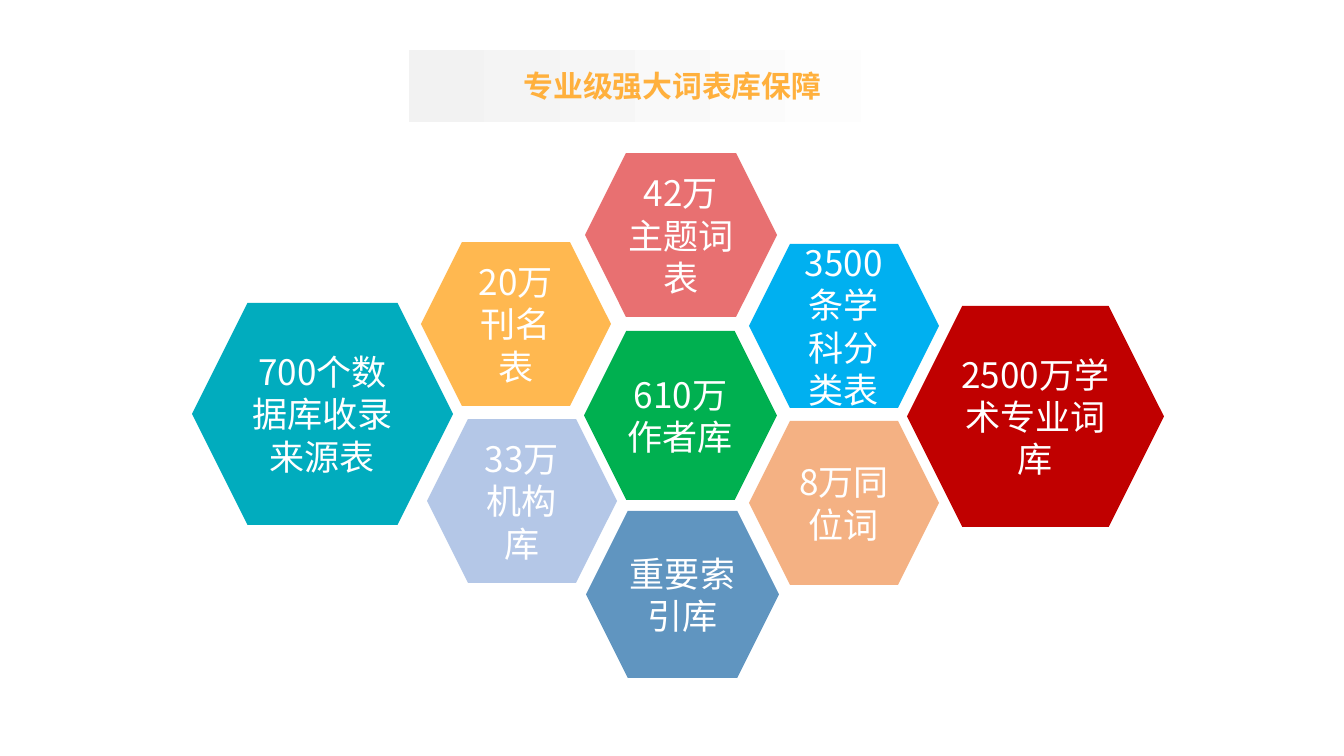
from dataclasses import dataclass

from lxml.etree import SubElement
from pptx import Presentation
from pptx.dml.color import RGBColor
from pptx.enum.shapes import MSO_SHAPE
from pptx.enum.text import MSO_ANCHOR, MSO_AUTO_SIZE, PP_ALIGN
from pptx.oxml.ns import qn
from pptx.shapes.base import BaseShape
from pptx.slide import Slide
from pptx.util import Pt

SCALE = 914400 / 134.4
FACE = "Noto Sans CJK SC"
WHITE = RGBColor(0xFF, 0xFF, 0xFF)
GREY = RGBColor(0xF2, 0xF2, 0xF2)
AMBER = RGBColor(0xFF, 0xB0, 0x3D)
SKY = RGBColor(0x00, 0xB0, 0xF0)
PEACH = RGBColor(0xF4, 0xB1, 0x83)
LILAC = RGBColor(0xB4, 0xC7, 0xE7)
GOLD = RGBColor(0xFF, 0xB8, 0x50)
TEAL = RGBColor(0x01, 0xAC, 0xBE)
ROSE = RGBColor(0xE8, 0x70, 0x71)
STEEL = RGBColor(0x60, 0x95, 0xC0)
RED = RGBColor(0xC0, 0x00, 0x00)
GREEN = RGBColor(0x00, 0xB0, 0x50)


@dataclass
class Cell:
    text: str
    fill: RGBColor
    left: int
    top: int
    width: int = 190
    height: int = 164


CELLS = [
    Cell("3500条学科分类表", SKY, 749, 244),
    Cell("8万同位词", PEACH, 749, 421),
    Cell("33万机构库", LILAC, 427, 419),
    Cell("20万\n刊名表", GOLD, 421, 242),
    Cell("700个数据库收录来源表", TEAL, 192, 303, 261, 222),
    Cell("42万主题词表", ROSE, 585, 153, 192),
    Cell("重要索引库", STEEL, 586, 511, 193, 167),
    Cell("2500万学术专业词库", RED, 907, 306, 257, 221),
    Cell("610万作者库", GREEN, 584, 331, 193, 169),
]


def px(size: int) -> int:
    return round(size * SCALE)


def write(shape: BaseShape, text: str, size: float, color: RGBColor, bold: bool) -> None:
    frame = shape.text_frame
    frame.text = text
    frame.word_wrap = True
    frame.auto_size = MSO_AUTO_SIZE.NONE
    frame.vertical_anchor = MSO_ANCHOR.MIDDLE
    for line in frame.paragraphs:
        line.alignment = PP_ALIGN.CENTER
        font = line.font
        font.name = FACE
        font.size = Pt(size)
        font.bold = bold
        font.color.rgb = color
        props = line._p.pPr.find(qn("a:defRPr"))
        SubElement(props, qn("a:ea"), typeface=FACE)


def draw_cell(slide: Slide, cell: Cell) -> None:
    box = map(px, (cell.left, cell.top, cell.width, cell.height))
    shape = slide.shapes.add_shape(MSO_SHAPE.HEXAGON, *box)
    shape.shadow.inherit = False
    shape.fill.solid()
    shape.fill.fore_color.rgb = cell.fill
    shape.line.fill.background()
    write(shape, cell.text, 18.8, WHITE, False)


def draw_title(slide: Slide, text: str) -> None:
    title = slide.shapes.title
    title.left, title.top, title.width, title.height = map(px, (409, 50, 527, 72))
    geom = SubElement(title.element.spPr, qn("a:prstGeom"), prst="roundRect")
    guides = SubElement(geom, qn("a:avLst"))
    SubElement(guides, qn("a:gd"), name="adj", fmla="val 42300")
    title.fill.gradient()
    title.fill.gradient_angle = 0
    for stop, color in zip(title.fill.gradient_stops, (GREY, WHITE)):
        stop.color.rgb = color
    write(title, text, 16, AMBER, True)


def main() -> None:
    deck = Presentation()
    deck.slide_width, deck.slide_height = px(1344), px(756)
    slide = deck.slides.add_slide(deck.slide_layouts[5])
    for cell in CELLS:
        draw_cell(slide, cell)
    draw_title(slide, "专业级强大词表库保障")
    deck.save("out.pptx")


if __name__ == "__main__":
    main()
